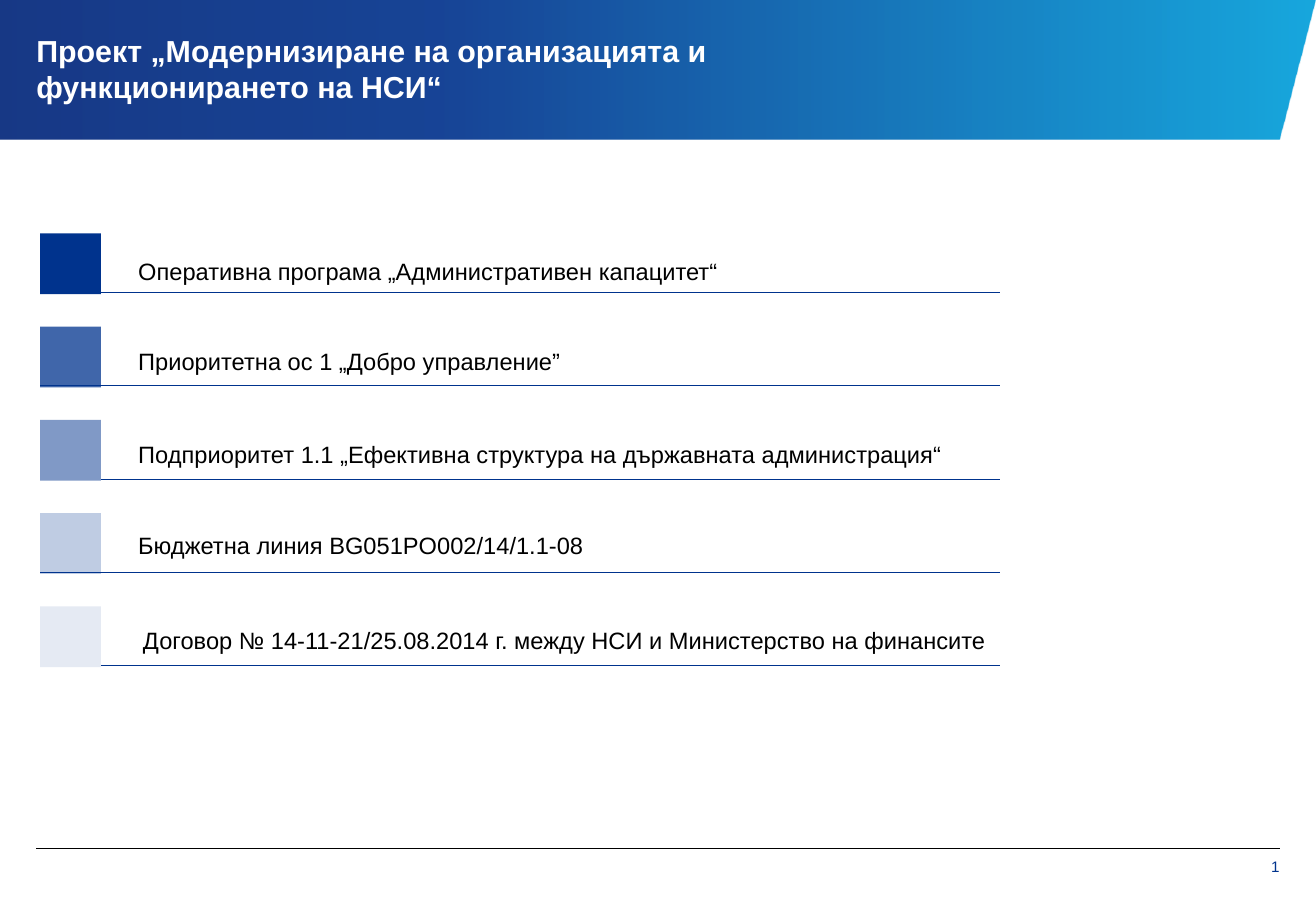
from lxml import etree
from pptx import Presentation
from pptx.dml.color import RGBColor
from pptx.enum import shapes as sh, text as tx
from pptx.oxml.ns import qn
from pptx.util import Cm, Pt

NAVY = RGBColor(0x00, 0x33, 0x8D)
DEEP = RGBColor(0x00, 0x25, 0x7A)
SKY = RGBColor(0x00, 0x9F, 0xDA)
BLACK = RGBColor(0, 0, 0)
WHITE = RGBColor(255, 255, 255)
TINTS = [NAVY, RGBColor(0x40, 0x66, 0xAA), RGBColor(0x80, 0x99, 0xC6),
         RGBColor(0xBF, 0xCC, 0xE3), RGBColor(0xE5, 0xEA, 0xF3)]

WIDTH, HEIGHT = 27.51, 19.05
LEFT, SIDE, PITCH = 0.84, 1.27, 1.95
TOP, BASE = 4.88, 6.12

# Label, top of its box, left inset
ROWS = [
    ("Оперативна програма „Административен капацитет“", 5.23, 0.15),
    ("Приоритетна ос 1 „Добро управление”", 7.13, 0.15),
    ("Подприоритет 1.1 „Ефективна структура на държавната администрация“",
     9.07, 0.15),
    ("Бюджетна линия BG051PO002/14/1.1-08", 10.97, 0.15),
    ("Договор № 14-11-21/25.08.2014 г. между НСИ и Министерство на финансите",
     12.95, 0.25),
]


def add_text(slide, words, x, y, w, h, size=14, color=BLACK, bold=False,
             align=tx.PP_ALIGN.LEFT, anchor=tx.MSO_ANCHOR.MIDDLE,
             inset=(0, 0, 0, 0), after=0):
    """Add a text box; inset is left, top, right, bottom in cm."""
    box = slide.shapes.add_textbox(Cm(x), Cm(y), Cm(w), Cm(h))
    frame = box.text_frame
    frame.word_wrap = True
    frame.vertical_anchor = anchor
    (frame.margin_left, frame.margin_top,
     frame.margin_right, frame.margin_bottom) = map(Cm, inset)
    para = frame.paragraphs[0]
    para.alignment = align
    para.space_after = Pt(after)
    run = para.add_run()
    run.text = words
    font = run.font
    font.name, font.size, font.bold = "Arial", Pt(size), bold
    font.color.rgb = color
    return run


def add_rule(slide, x, y, end, color, width):
    line = slide.shapes.add_connector(
        sh.MSO_CONNECTOR.STRAIGHT, Cm(x), Cm(y), Cm(end), Cm(y))
    line.line.color.rgb = color
    line.line.width = Pt(width)
    etree.SubElement(line._element.spPr, qn("a:effectLst"))


def add_square(slide, x, y, color):
    box = slide.shapes.add_shape(
        sh.MSO_SHAPE.RECTANGLE, Cm(x), Cm(y), Cm(SIDE), Cm(SIDE))
    box.shadow.inherit = False
    box.fill.solid()
    box.fill.fore_color.rgb = color
    box.line.fill.background()


def add_banner(slide):
    low, foot = 2.92, 26.75
    path = slide.shapes.build_freeform(Cm(WIDTH), 0)
    path.add_line_segments(
        [(0, 0), (0, Cm(low)), (Cm(foot), Cm(low))], close=True)
    band = path.convert_to_shape()
    band.shadow.inherit = False
    band.line.fill.background()
    band.fill.gradient()
    band.fill.gradient_angle = 0
    stops = band._element.spPr.find(".//" + qn("a:gsLst"))
    for stop in list(stops):
        stops.remove(stop)
    for place, color in ((0, DEEP), (35, NAVY), (100, SKY)):
        stop = etree.SubElement(stops, qn("a:gs"), pos=str(place * 1000))
        tone = etree.SubElement(stop, qn("a:srgbClr"), val=str(color))
        etree.SubElement(tone, qn("a:alpha"), val="90000")


def make_field(run):
    """Turn a run into a slide number field."""
    old = run._r
    field = etree.Element(
        qn("a:fld"), id="{B6F15528-21DE-4FAA-801E-634DDDAF4B2B}",
        type="slidenum")
    old.addprevious(field)
    field.extend(list(old))
    old.getparent().remove(old)


def add_list(slide):
    def rules(rows):
        for row in rows:
            add_rule(slide, LEFT, BASE + row * PITCH, 20.9, NAVY, 0.5)

    rules((0, 2, 4))
    for row, tint in enumerate(TINTS):
        add_square(slide, LEFT, TOP + row * PITCH, tint)
    rules((1, 3))
    for words, top, pad in ROWS:
        add_text(slide, words, 2.74, top, 18.54, 0.86,
                 inset=(pad, 0.15, 0.15, 0.15), after=6)


def main():
    deck = Presentation()
    deck.slide_width, deck.slide_height = Cm(WIDTH), Cm(HEIGHT)
    slide = deck.slides.add_slide(deck.slide_layouts[6])
    add_banner(slide)
    add_rule(slide, 0.76, 17.73, 26.75, BLACK, 0.25)
    page = add_text(slide, "1", 25.35, 17.73, 1.4, 0.79, size=9, color=NAVY,
                    align=tx.PP_ALIGN.RIGHT, anchor=tx.MSO_ANCHOR.TOP,
                    inset=(0.2, 0.2, 0, 0))
    make_field(page)
    add_text(slide,
             "Проект „Модернизиране на организацията и функционирането на НСИ“",
             0.76, 0.33, 15.54, 2.21, size=18, color=WHITE, bold=True)
    add_list(slide)
    deck.save("out.pptx")


if __name__ == "__main__":
    main()
